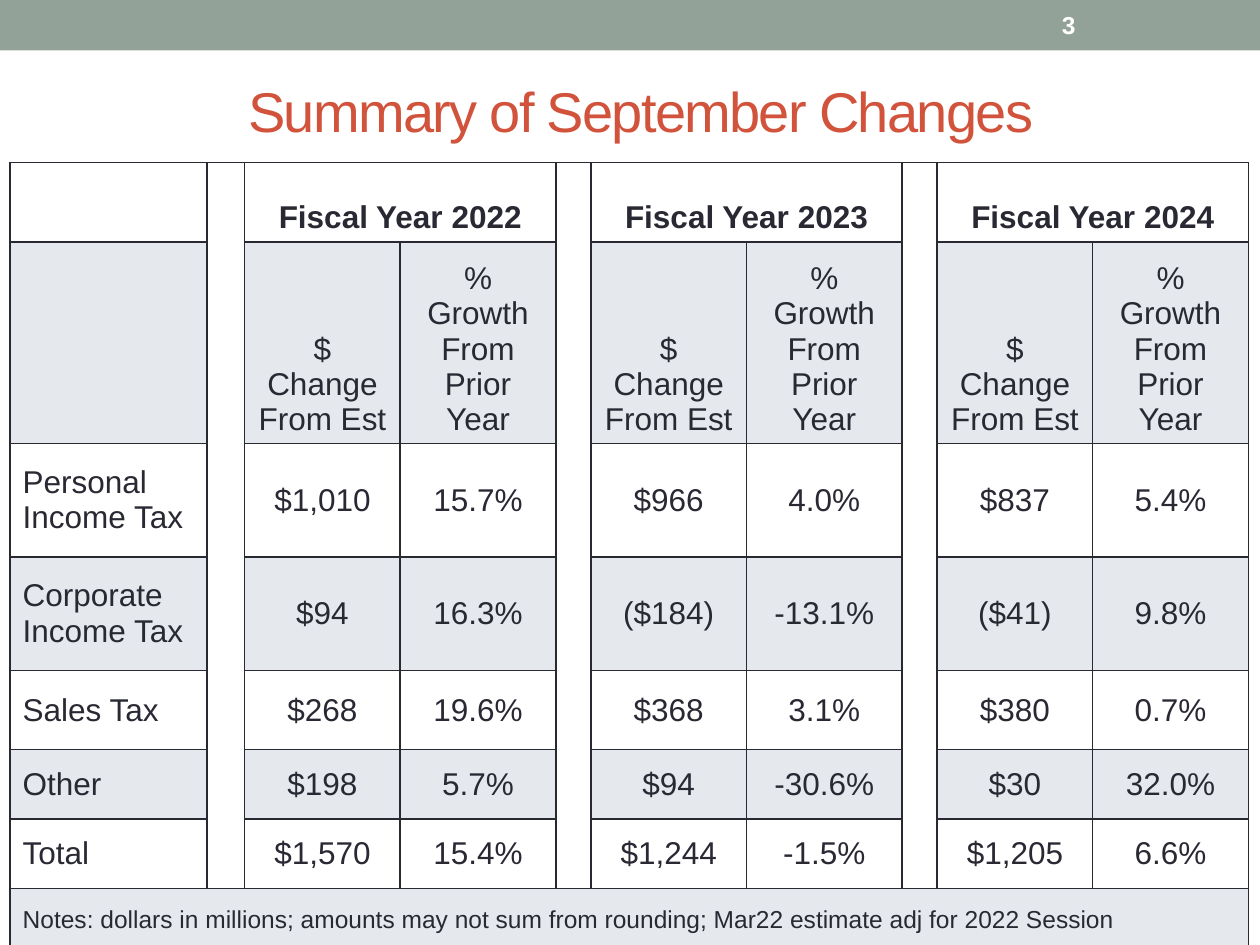
from dataclasses import dataclass

from lxml import etree
from pptx import Presentation
from pptx.dml.color import RGBColor
from pptx.enum import shapes, text
from pptx.oxml import ns
from pptx.util import Inches, Pt


@dataclass(frozen=True)
class Theme:
    font: str = "Arial"
    bar: RGBColor = RGBColor.from_string("93A299")
    title: RGBColor = RGBColor.from_string("D2533C")
    ink: RGBColor = RGBColor.from_string("292934")
    band: RGBColor = RGBColor.from_string("808DA0")
    white: RGBColor = RGBColor.from_string("FFFFFF")
    band_alpha: int = 20000
    title_size: Pt = Pt(32)
    body_size: Pt = Pt(18)
    small_size: Pt = Pt(14)


THEME = Theme()
CENTER, LEFT = text.PP_ALIGN.CENTER, text.PP_ALIGN.LEFT
MIDDLE, BOTTOM = text.MSO_ANCHOR.MIDDLE, text.MSO_ANCHOR.BOTTOM

YEARS = ["Fiscal Year 2022", "Fiscal Year 2023", "Fiscal Year 2024"]
MEASURES = ["$ Change From Est", "% Growth From Prior Year"]
TAXES = [
    ("Personal Income Tax", "$1,010", "15.7%", "$966", "4.0%", "$837", "5.4%"),
    ("Corporate Income Tax", "$94", "16.3%", "($184)", "-13.1%", "($41)", "9.8%"),
    ("Sales Tax", "$268", "19.6%", "$368", "3.1%", "$380", "0.7%"),
    ("Other", "$198", "5.7%", "$94", "-30.6%", "$30", "32.0%"),
    ("Total", "$1,570", "15.4%", "$1,244", "-1.5%", "$1,205", "6.6%"),
]
NOTES = ("Notes: dollars in millions; amounts may not sum from rounding; "
         "Mar22 estimate adj for 2022 Session")
COLUMN_WIDTHS = [1.57, 0.3, 1.24, 1.24, 0.28, 1.24, 1.24, 0.28, 1.24, 1.24]
ROW_HEIGHTS = [0.63, 1.45, 0.9, 0.9, 0.63, 0.55, 0.55, 0.51]
GAP_COLUMNS = [1, 4, 7]


def write(frame, words, size, color, bold=False, align=LEFT):
    frame.text = words
    paragraph = frame.paragraphs[0]
    paragraph.alignment = align
    for run in paragraph.runs:
        run.font.name, run.font.size = THEME.font, size
        run.font.bold, run.font.color.rgb = bold, color


def add_header(slide, left, top, width, height):
    """Place the coloured bar with the page number inside it."""
    bar = slide.shapes.add_shape(
        shapes.MSO_SHAPE.RECTANGLE, left, top, width, height)
    bar.shadow.inherit = False
    bar.fill.solid()
    bar.fill.fore_color.rgb = THEME.bar
    bar.line.fill.background()

    page = slide.shapes.add_textbox(
        left + Inches(8.33), top + Inches(0.02), Inches(1.17), height - Inches(0.04))
    page.text_frame.word_wrap = True
    page.text_frame.vertical_anchor = MIDDLE
    write(page.text_frame, "3", THEME.small_size, THEME.white, bold=True)


def add_title(slide, left, top, width, height):
    title = slide.shapes.title
    title.left, title.top, title.width, title.height = left, top, width, height
    title.text_frame.vertical_anchor = MIDDLE
    write(title.text_frame, "Summary of September Changes",
          THEME.title_size, THEME.title, align=CENTER)
    title.text_frame.paragraphs[0].runs[0].font._element.set("spc", "-100")


def style_cell(cell, banded):
    """Fill the cell and draw a thin line on each of its sides."""
    if banded:
        cell.fill.solid()
        cell.fill.fore_color.rgb = THEME.band
    else:
        cell.fill.background()
    properties = cell._tc.get_or_add_tcPr()
    for color in properties.iter(ns.qn("a:srgbClr")):
        etree.SubElement(color, ns.qn("a:alpha"), val=str(THEME.band_alpha))
    for position, side in enumerate(("a:lnL", "a:lnR", "a:lnT", "a:lnB")):
        line = etree.Element(ns.qn(side), w=str(Pt(1)))
        fill = etree.SubElement(line, ns.qn("a:solidFill"))
        etree.SubElement(fill, ns.qn("a:srgbClr"), val=str(THEME.ink))
        properties.insert(position, line)


def add_tax_table(slide, left, top, width, height):
    last_row, last_column = len(ROW_HEIGHTS) - 1, len(COLUMN_WIDTHS) - 1
    table = slide.shapes.add_table(
        last_row + 1, last_column + 1, left, top, width, height).table
    table.first_row = table.horz_banding = False
    scale = width / sum(COLUMN_WIDTHS)
    for column, inches in zip(table.columns, COLUMN_WIDTHS):
        column.width = round(inches * scale)
    for row, inches in zip(table.rows, ROW_HEIGHTS):
        row.height = Inches(inches)

    for r in range(last_row + 1):
        for c in range(last_column + 1):
            in_gap = c in GAP_COLUMNS and r < last_row
            style_cell(table.cell(r, c), r % 2 == 1 and not in_gap)
    for gap in GAP_COLUMNS:
        table.cell(0, gap).merge(table.cell(last_row - 1, gap))
        table.cell(0, gap + 1).merge(table.cell(0, gap + 2))
    table.cell(last_row, 0).merge(table.cell(last_row, last_column))

    def put(r, c, words, anchor=MIDDLE, size=THEME.body_size, **style):
        cell = table.cell(r, c)
        cell.vertical_anchor = anchor
        write(cell.text_frame, words, size, THEME.ink, **style)

    value_columns = [gap + offset for gap in GAP_COLUMNS for offset in (1, 2)]
    for gap, year in zip(GAP_COLUMNS, YEARS):
        put(0, gap + 1, year, BOTTOM, bold=True, align=CENTER)
    for c, measure in zip(value_columns, MEASURES * len(YEARS)):
        put(1, c, measure, BOTTOM, align=CENTER)
    for r, (tax, *values) in enumerate(TAXES, start=2):
        put(r, 0, tax)
        for c, value in zip(value_columns, values):
            put(r, c, value, align=CENTER)
    put(last_row, 0, NOTES, size=THEME.small_size)


def main():
    deck = Presentation()
    deck.slide_width, deck.slide_height = Inches(10), Inches(7.5)
    slide = deck.slides.add_slide(deck.slide_layouts.get_by_name("Title Only"))
    add_header(slide, 0, 0, deck.slide_width, Inches(0.4))
    add_title(slide, Inches(0.5), Inches(0.5), Inches(9.17), Inches(0.75))
    add_tax_table(slide, Inches(0.08), Inches(1.29), Inches(9.83),
                  Inches(sum(ROW_HEIGHTS)))
    deck.save("out.pptx")


if __name__ == "__main__":
    main()
